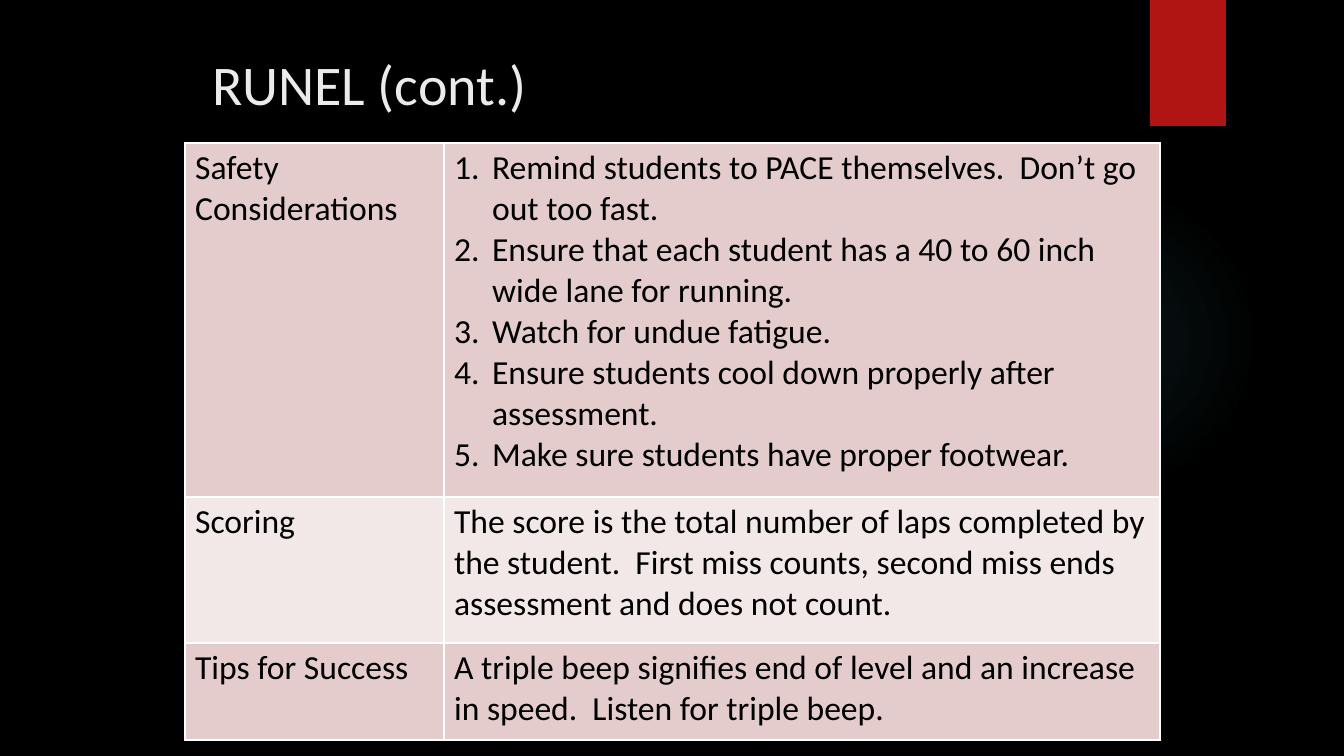
from lxml.etree import SubElement
from pptx import Presentation
from pptx.dml.color import RGBColor
from pptx.enum.shapes import MSO_SHAPE as Preset
from pptx.enum.text import MSO_ANCHOR as Anchor, PP_ALIGN as Align
from pptx.oxml import parse_xml
from pptx.oxml.ns import nsdecls, qn
from pptx.util import Emu, Pt

EMU_PER_PX = 914400 / 100.8
FONT = "Calibri"
BLACK = RGBColor(0x00, 0x00, 0x00)
WHITE = RGBColor(0xFF, 0xFF, 0xFF)
TITLE_GRAY = RGBColor(0xEB, 0xEB, 0xEB)
RED = RGBColor(0xB0, 0x15, 0x13)
TEAL = RGBColor(0x50, 0xB9, 0xC1)
BANDS = [RGBColor(0xE4, 0xCC, 0xCC), RGBColor(0xF2, 0xE8, 0xE7)]

GLOW_STOPS = [(0, 7), (36, 6), (69, 0)]
COLUMN_WIDTHS = [259, 716]
ROW_HEIGHTS = [354, 146, 97]
ROWS = [
    ("Safety Considerations", [
        "Remind students to PACE themselves.  Don’t go out too fast.",
        "Ensure that each student has a 40 to 60 inch wide lane for running.",
        "Watch for undue fatigue.",
        "Ensure students cool down properly after assessment.",
        "Make sure students have proper footwear.",
    ]),
    ("Scoring", [
        "The score is the total number of laps completed by the student.  "
        "First miss counts, second miss ends assessment and does not count.",
    ]),
    ("Tips for Success", [
        "A triple beep signifies end of level and an increase in speed.  "
        "Listen for triple beep.",
    ]),
]


def px(length):
    return Emu(round(length * EMU_PER_PX))


def box(*lengths):
    return [px(length) for length in lengths]


def add_run(paragraph, text, size, color):
    run = paragraph.add_run()
    run.text = text
    run.font.name = FONT
    run.font.size = Pt(size)
    run.font.color.rgb = color


def add_plain_shape(slide, preset, bounds, color):
    shape = slide.shapes.add_shape(preset, *box(*bounds))
    shape.shadow.inherit = False
    shape.fill.solid()
    shape.fill.fore_color.rgb = color
    shape.line.fill.background()
    return shape


def add_glow(slide, bounds):
    shape = add_plain_shape(slide, Preset.OVAL, bounds, TEAL)
    stops = "".join(
        f'<a:gs pos="{position * 1000}"><a:srgbClr val="{TEAL}">'
        f'<a:alpha val="{opacity * 1000}"/></a:srgbClr></a:gs>'
        for position, opacity in GLOW_STOPS
    )
    gradient = parse_xml(
        f'<a:gradFill {nsdecls("a")}><a:gsLst>{stops}</a:gsLst>'
        '<a:path path="circle"><a:fillToRect l="50000" t="50000" r="50000" b="50000"/>'
        '</a:path></a:gradFill>'
    )
    properties = shape.element.spPr
    properties.replace(properties.find(qn("a:solidFill")), gradient)


def set_title(slide, text, bounds):
    title = slide.shapes.title
    title.left, title.top, title.width, title.height = box(*bounds)
    frame = title.text_frame
    frame.vertical_anchor = Anchor.TOP
    frame.margin_top = px(8)
    paragraph = frame.paragraphs[0]
    paragraph.alignment = Align.LEFT
    add_run(paragraph, text, 40, TITLE_GRAY)


def number_paragraph(paragraph):
    properties = paragraph._p.get_or_add_pPr()
    properties.set("marL", str(px(38)))
    properties.set("indent", str(-px(38)))
    SubElement(properties, qn("a:buFont"), typeface="+mj-lt")
    SubElement(properties, qn("a:buAutoNum"), type="arabicPeriod")


def set_borders(cell):
    properties = cell._tc.get_or_add_tcPr()
    for position, side in enumerate(("lnL", "lnR", "lnT", "lnB")):
        border = parse_xml(
            f'<a:{side} {nsdecls("a")} w="{Pt(1)}"><a:solidFill>'
            f'<a:srgbClr val="{WHITE}"/></a:solidFill></a:{side}>'
        )
        properties.insert(position, border)


def fill_cell(cell, texts, color):
    cell.fill.solid()
    cell.fill.fore_color.rgb = color
    set_borders(cell)
    frame = cell.text_frame
    for index, text in enumerate(texts):
        paragraph = frame.add_paragraph() if index else frame.paragraphs[0]
        if len(texts) > 1:
            number_paragraph(paragraph)
        add_run(paragraph, text, 24, BLACK)


def add_guidance_table(slide, left, top):
    bounds = box(left, top, sum(COLUMN_WIDTHS), sum(ROW_HEIGHTS))
    table = slide.shapes.add_table(len(ROWS), len(COLUMN_WIDTHS), *bounds).table
    table.first_row = False
    for column, width in zip(table.columns, COLUMN_WIDTHS):
        column.width = px(width)
    for index, (heading, details) in enumerate(ROWS):
        table.rows[index].height = px(ROW_HEIGHTS[index])
        color = BANDS[index % len(BANDS)]
        fill_cell(table.cell(index, 0), [heading], color)
        fill_cell(table.cell(index, 1), details, color)


def main():
    presentation = Presentation()
    presentation.slide_width, presentation.slide_height = box(1344, 756)
    slide = presentation.slides.add_slide(presentation.slide_layouts[5])
    slide.background.fill.solid()
    slide.background.fill.fore_color.rgb = BLACK
    add_glow(slide, (949, 184, 310, 310))
    add_plain_shape(slide, Preset.RECTANGLE, (1150, 0, 76, 126), RED)
    set_title(slide, "RUNEL (cont.)", (202, 42, 818, 109))
    add_guidance_table(slide, 185, 143)
    presentation.save("out.pptx")


if __name__ == "__main__":
    main()
